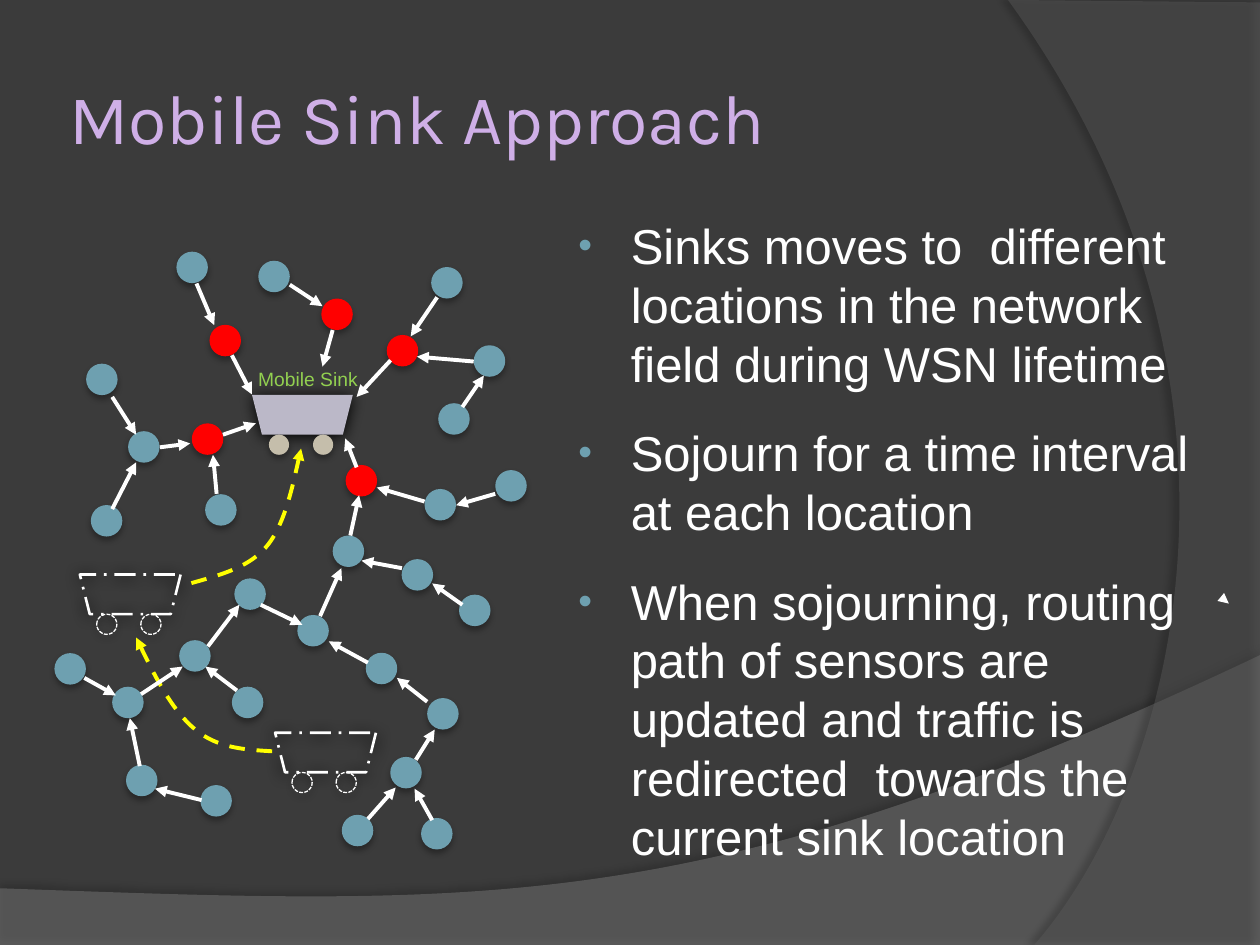
from lxml import etree
from pptx import Presentation
from pptx.dml.color import RGBColor
from pptx.enum.dml import MSO_LINE
from pptx.enum.shapes import MSO_CONNECTOR, MSO_SHAPE
from pptx.enum.text import MSO_ANCHOR
from pptx.oxml.ns import qn
from pptx.util import Pt

ELLIPSE, TRAPEZOID = MSO_SHAPE.OVAL, MSO_SHAPE.TRAPEZOID
STRAIGHT = MSO_CONNECTOR.STRAIGHT
DASH, DASH_DOT, FINE_DASH = MSO_LINE.DASH, MSO_LINE.LONG_DASH_DOT, MSO_LINE.SQUARE_DOT
MIDDLE = MSO_ANCHOR.MIDDLE

WHITE, BLUE, RED, YELLOW = "FFFFFF", "6EA0B0", "FF0000", "FFFF00"
# Shadows: opacity %, blur, distance, direction in degrees
SOFT, DEEP = (32, 3.5, 2.2, 90), (100, 8.5, 1, 90)
NODE, WHEEL = 18, 11.5

# Sensor positions and links (sender to receiver), relative to the network box
SENSORS = [
    (253, 128.6), (117.6, 9), (87.2, 142.4), (160.1, 166), (139.9, 211.4),
    (214.1, 258.9), (34.1, 252.4), (102.5, 252.4), (240.7, 57.3), (84.5, 308.6),
    (103.9, 190.5), (220.4, 90.4), (70.8, 3.8), (165.3, 325.6), (72.4, 225.8),
    (199.5, 179.5), (212.6, 139.4), (19.2, 67.8), (179, 233), (193, 292.5),
    (43.2, 106.4), (21.9, 148.6), (42, 297), (216.4, 12.6), (232.3, 199.8),
    (210.6, 327.4), (1.1, 233.2)]
GATEWAYS = [(89.7, 45.6), (167.5, 125.7), (153.6, 30.6), (79.6, 101.9), (191, 51.4)]
LINKS = [
    (193.2, 65.9, 173.8, 86.8), (160.1, 48.6, 154.3, 69.5), (102.5, 63, 114, 85.4),
    (82.3, 22, 92.4, 45.8), (135.6, 22.7, 154.3, 35), (240.7, 66.6, 208.3, 63.8),
    (219.8, 29.9, 204.7, 52.2), (34.1, 86.8, 47.8, 108.4), (61.4, 115.6, 78.7, 113.4),
    (97.4, 108.4, 116.2, 101.9), (173.8, 127.1, 167.3, 110.6),
    (212.6, 146.6, 185.3, 138.6), (93.8, 142.2, 91.7, 119.9), (170.2, 166, 175.2, 143),
    (152.9, 212.1, 165.1, 184.7), (199.7, 184.7, 176.6, 180.4),
    (34.1, 150.9, 47.8, 124.2), (234.2, 92.6, 246.5, 74.6), (253, 142.2, 230.6, 148.7),
    (180.2, 238.7, 157.9, 226.5), (214.1, 261, 196.8, 247.4),
    (119, 205.6, 142.8, 217.1), (234.2, 205.6, 217, 193.4), (105.4, 254.6, 87.4, 240.9),
    (85.2, 317.2, 58.6, 310.7), (49.9, 297.8, 44.2, 270.4), (50.6, 256.7, 74.4, 240.9),
    (217, 328.7, 206.9, 310.7), (180.2, 328, 196.1, 310), (207.6, 294.2, 218.4, 276.9),
    (18.2, 247.4, 36.2, 257.4), (88.8, 229.4, 106.8, 205.6)]
PAST_SINKS = [(15.6, 188.3), (127.2, 278.7)]
CURRENT_SINK = (114, 85.7)
# Each route: a start, then curves of control, control, end
ROUTES = [
    ((79.4, 193.2), [((96.7, 188.3), (113.3, 184), (123.4, 171)),
                     ((133.4, 158.1), (142.1, 116.3), (142.1, 116.3))]),
    ((125.5, 289.3), [((110.4, 288.4), (94.6, 287.7), (81.6, 276.9)),
                      ((68.6, 266.1), (57.8, 245.2), (47.8, 224.3))])]
POINTS = [
    "Sinks moves to  different locations in the network field during WSN lifetime",
    "Sojourn for a time interval at each location",
    "When sojourning, routing path of sensors are updated and traffic is "
    "redirected  towards the current sink location"]


def rgb(value):
    return RGBColor.from_string(value)


def add_xml(parent, tag, **attributes):
    return etree.SubElement(parent, qn(tag), {k: str(v) for k, v in attributes.items()})


def style(shape, fill=None, line=None, width=1, dash=None, shadow=None, opacity=None):
    if fill:
        shape.fill.solid()
        shape.fill.fore_color.rgb = rgb(fill)
        if opacity:
            color = shape.fill._xPr.find(qn("a:solidFill"))[0]
            add_xml(color, "a:alpha", val=opacity * 1000)
    else:
        shape.fill.background()
    if line:
        shape.line.color.rgb = rgb(line)
        shape.line.width = Pt(width)
        if dash:
            shape.line.dash_style = dash
    else:
        shape.line.fill.background()
    shape.shadow.inherit = False
    if shadow:
        alpha, blur, distance, angle = shadow
        effects = shape._element.spPr.find(qn("a:effectLst"))
        outer = add_xml(effects, "a:outerShdw", blurRad=Pt(blur), dist=Pt(distance),
                        dir=angle * 60000, rotWithShape=0)
        add_xml(add_xml(outer, "a:srgbClr", val="000000"), "a:alpha", val=alpha * 1000)


def add_preset(slide, kind, x, y, w, h, **look):
    shape = slide.shapes.add_shape(kind, Pt(x), Pt(y), Pt(w), Pt(h))
    style(shape, **look)
    return shape


def add_arrow(slide, x1, y1, x2, y2, width=2.25):
    arrow = slide.shapes.add_connector(STRAIGHT, Pt(x1), Pt(y1), Pt(x2), Pt(y2))
    arrow.line.color.rgb = rgb(WHITE)
    arrow.line.width = Pt(width)
    add_xml(arrow.line._get_or_add_ln(), "a:tailEnd", type="triangle")
    add_xml(arrow._element.spPr, "a:effectLst")


def add_outline(slide, x, y, start, segments, close, **look):
    """Each segment is (end,) for a line or (control, control, end) for a curve."""
    def place(point):
        return Pt(x + point[0]), Pt(y + point[1])

    builder = slide.shapes.build_freeform(*place(start), scale=1.0)
    builder.add_line_segments([place(segment[-1]) for segment in segments], close=close)
    shape = builder.convert_to_shape()
    # Bend the segments that have control points
    lines = list(shape._element.iter(qn("a:lnTo")))
    for line, segment in zip(lines, segments):
        if len(segment) == 3:
            line.tag = qn("a:cubicBezTo")
            bend = line.getparent().makeelement(qn("a:cubicBezTo"), {})
            line.getparent().replace(line, bend)
            for px, py in map(place, segment):
                add_xml(bend, "a:pt", x=px - shape.left, y=py - shape.top)
    style(shape, **look)
    return shape


def add_text(paragraph, text, size, font, color):
    run = paragraph.add_run()
    run.text = text
    run.font.size, run.font.name = Pt(size), font
    run.font.color.rgb = rgb(color)


def add_frame(slide, x, y, w, h, wrap=True):
    frame = slide.shapes.add_textbox(Pt(x), Pt(y), Pt(w), Pt(h)).text_frame
    frame.word_wrap = wrap
    return frame


def draw_backdrop(slide, x, y, w, h):
    slide.background.fill.solid()
    slide.background.fill.fore_color.rgb = rgb("3B3B3B")
    # Floor swoosh
    floor = [((0, h),), ((w, h),), ((w, 374.4),), ((402.5, 524.9), (281.5, 517.7), (0, 507.6))]
    add_outline(slide, x, y, (0, 507.6), floor, True,
                fill="7F7F7F", opacity=45, shadow=(35, 4, 3.5, 270))
    # Right-hand swoosh
    side = [((w, h),), ((591, h),), ((673.2, 445.7), (733, 216), (576, 0)), ((w, 1.4),)]
    add_outline(slide, x, y, (w, 1.4), side, True,
                fill="5E5E5E", opacity=40, shadow=(45, 4, 4, 180))


def draw_title(slide, x, y, w, h):
    frame = add_frame(slide, x, y, w, h)
    frame.vertical_anchor = MIDDLE
    frame.margin_left = frame.margin_right = Pt(3.6)
    add_text(frame.paragraphs[0], "Mobile Sink Approach", 40, "Karla", "CFAFE7")


def draw_sink(slide, x, y, body, wheel):
    add_preset(slide, TRAPEZOID, x, y, 57.6, 22.6, shadow=DEEP, **body).rotation = 180
    for offset in (9.7, 34.9):
        add_preset(slide, ELLIPSE, x + offset, y + 22.7, WHEEL, WHEEL, shadow=SOFT, **wheel)


def draw_network(slide, x, y):
    # Sensors and the gateways next to the sink
    for color, places in ((BLUE, SENSORS), (RED, GATEWAYS)):
        for dx, dy in places:
            add_preset(slide, ELLIPSE, x + dx, y + dy, NODE, NODE, fill=color, shadow=SOFT)
    # Earlier sink positions
    for dx, dy in PAST_SINKS:
        draw_sink(slide, x + dx, y + dy, dict(line=WHITE, width=1.5, dash=DASH_DOT),
                  dict(line=WHITE, width=0.75, dash=FINE_DASH))
    # Sink routes
    for start, curves in ROUTES:
        route = add_outline(slide, x, y, start, curves, False,
                            line=YELLOW, width=2.25, dash=DASH)
        add_xml(route.line._get_or_add_ln(), "a:tailEnd", type="triangle")
    # Current sink with its label
    sink_x, sink_y = x + CURRENT_SINK[0], y + CURRENT_SINK[1]
    draw_sink(slide, sink_x, sink_y, dict(fill="BBB8C8"), dict(fill="C5BEAB"))
    label = add_frame(slide, sink_x - 3.6, sink_y - 19.4, 72, 20.9, wrap=False)
    add_text(label.paragraphs[0], "Mobile Sink", 11, "Arial", "92D050")
    # Data links
    for x1, y1, x2, y2 in LINKS:
        add_arrow(slide, x + x1, y + y1, x + x2, y + y2)


def draw_points(slide, x, y, w, h):
    frame = add_frame(slide, x, y, w, h)
    for i, text in enumerate(POINTS):
        paragraph = frame.paragraphs[0] if i == 0 else frame.add_paragraph()
        paragraph.space_before = Pt(5.6)
        paragraph.space_after = Pt(12 if i < len(POINTS) - 1 else 0)
        properties = paragraph._p.get_or_add_pPr()
        properties.set("marL", str(Pt(33)))
        properties.set("indent", str(Pt(-30)))
        add_xml(add_xml(properties, "a:buClr"), "a:srgbClr", val=BLUE)
        add_xml(properties, "a:buSzPct", val=80000)
        add_xml(properties, "a:buFont", typeface="Arial")
        add_xml(properties, "a:buChar", char="•")
        add_text(paragraph, text, 28, "Arial", WHITE)


def main():
    deck = Presentation()
    deck.slide_width, deck.slide_height = Pt(720), Pt(540)
    slide = deck.slides.add_slide(deck.slide_layouts[6])
    draw_backdrop(slide, 0, 0, 720, 540)
    draw_title(slide, 36, 21.6, 588, 90)
    draw_network(slide, 30, 140)
    draw_points(slide, 320.4, 119.5, 391, 394.6)
    # Small arrowhead at the right edge
    add_arrow(slide, 701.6, 344.4, 702.2, 344.9, width=0.75)
    deck.save("out.pptx")


if __name__ == "__main__":
    main()
